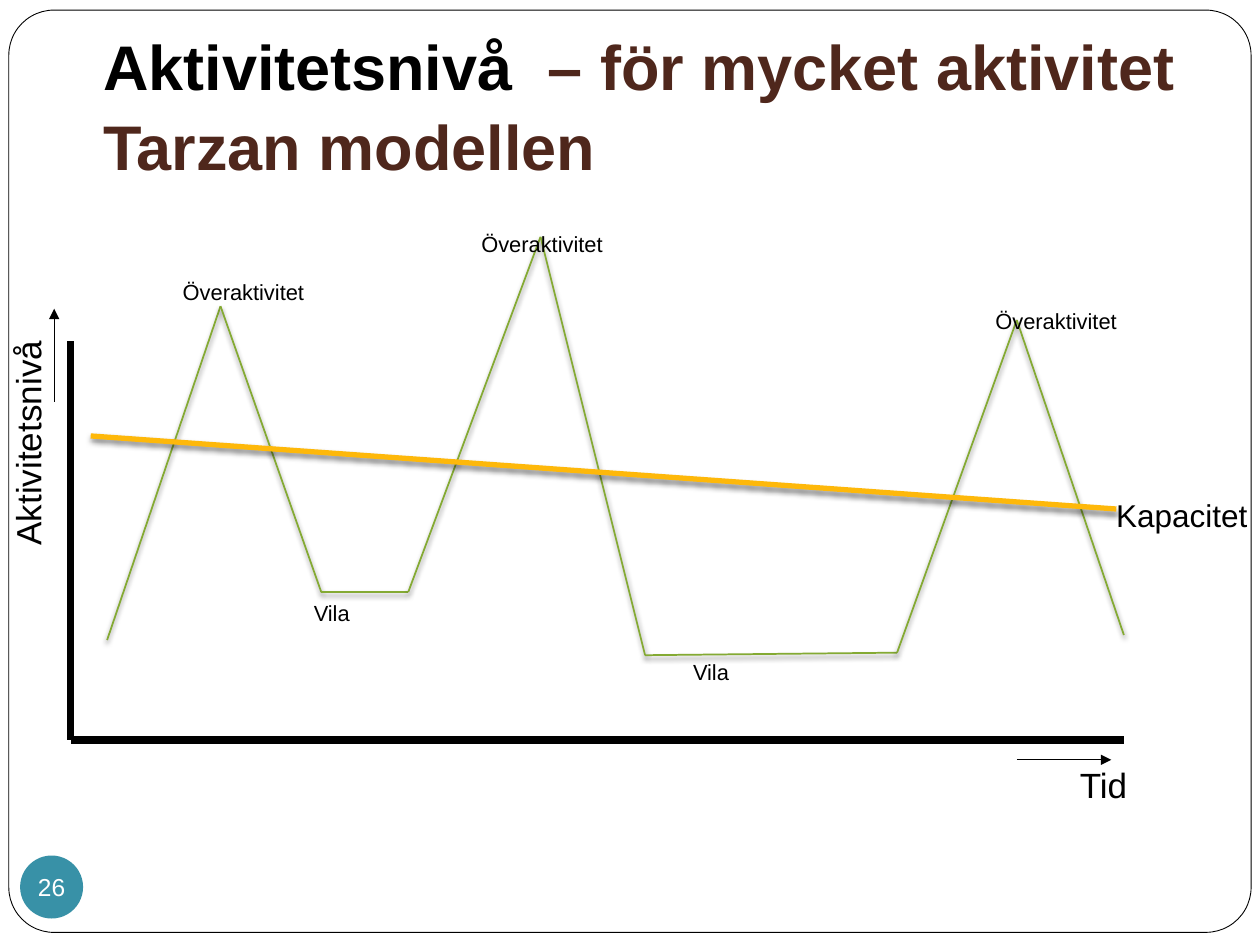
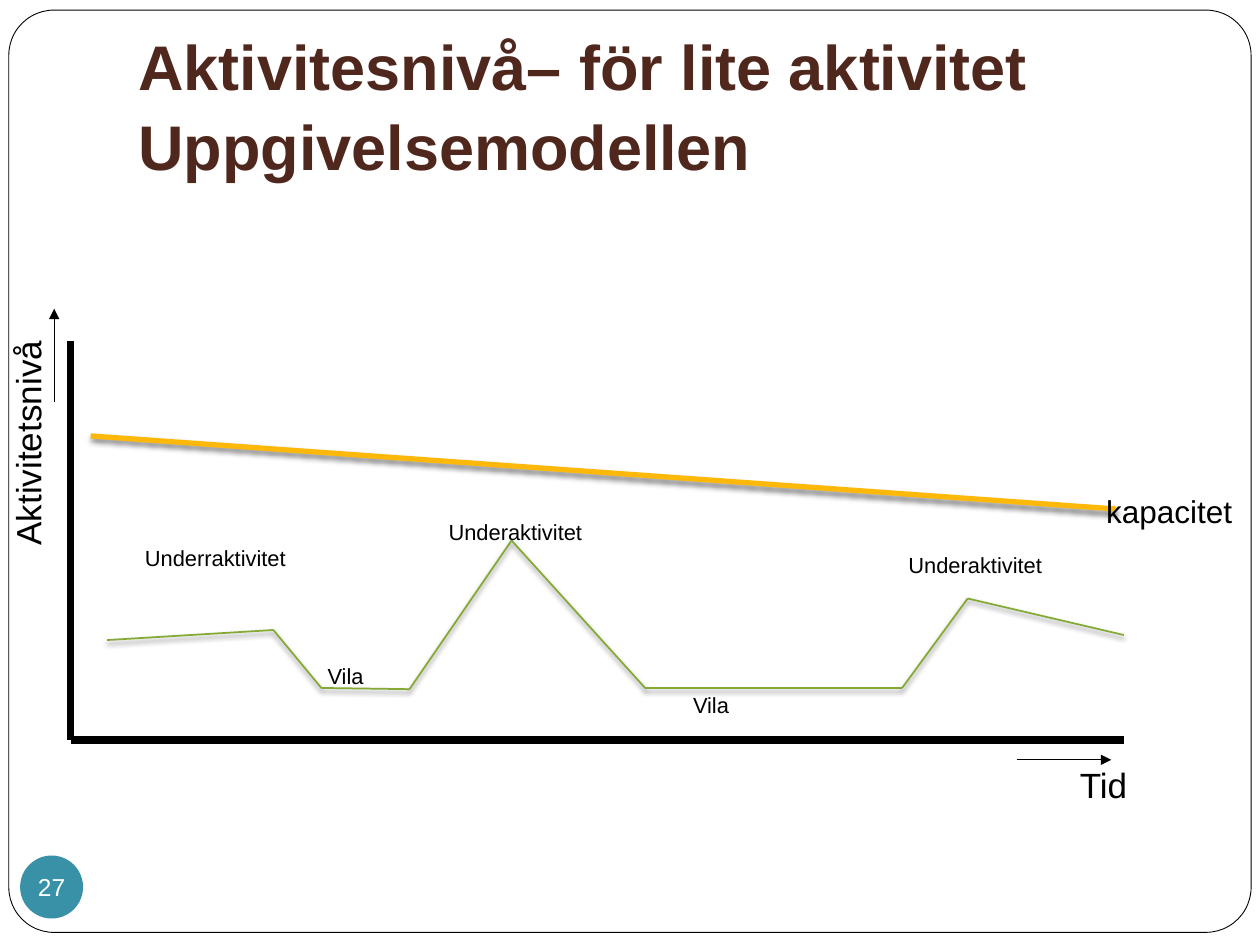
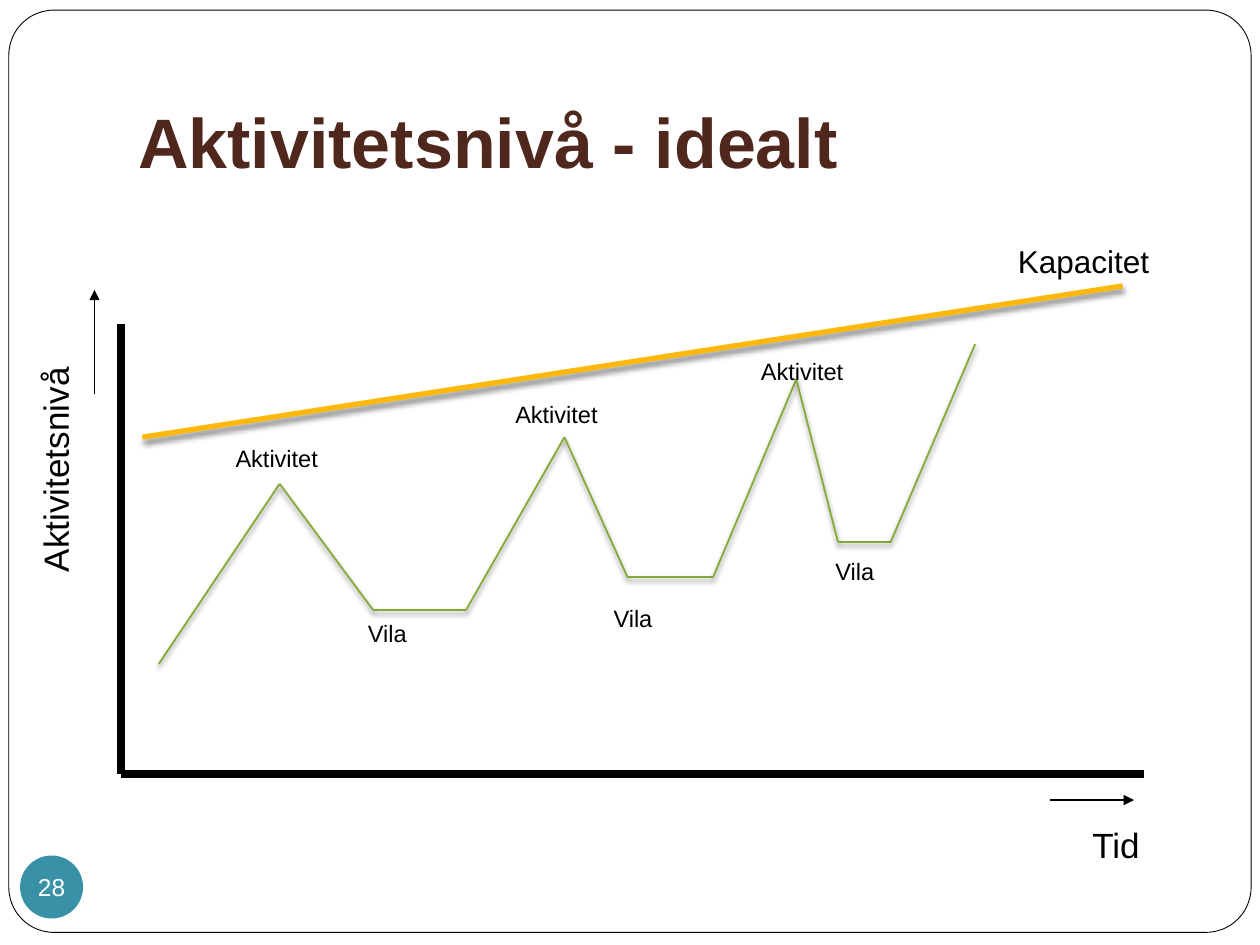
from dataclasses import dataclass
from itertools import pairwise
from typing import NamedTuple

from lxml.etree import SubElement
from pptx import Presentation
from pptx.dml.color import RGBColor
from pptx.enum.shapes import MSO_CONNECTOR, MSO_SHAPE
from pptx.enum.text import MSO_ANCHOR, PP_ALIGN
from pptx.oxml.ns import qn
from pptx.shapes.autoshape import Shape
from pptx.shapes.connector import Connector
from pptx.slide import Slide
from pptx.text.text import TextFrame
from pptx.util import Inches, Pt


@dataclass(frozen=True)
class Theme:
    font: str = "Arial"
    black: str = "000000"
    white: str = "FFFFFF"
    title: str = "4F271C"
    activity: str = "84AA33"
    capacity: str = "FEB80A"
    badge: str = "3891A7"
    axis_size: float = 20
    capacity_size: float = 18
    badge_size: float = 14


THEME = Theme()
FIRST_NUMBER = 26


class Point(NamedTuple):
    x: float
    y: float


class Box(NamedTuple):
    left: float
    top: float
    width: float
    height: float


class Insets(NamedTuple):
    left: float
    top: float
    right: float
    bottom: float


class Run(NamedTuple):
    text: str
    color: str = THEME.title


class Label(NamedTuple):
    text: str
    box: Box


@dataclass(frozen=True)
class Axes:
    origin: Point
    top: float
    right: float
    up_arrow: tuple[Point, Point]
    time_arrow: tuple[Point, Point]
    level_box: Box
    time_box: Box


@dataclass(frozen=True)
class ActivitySlide:
    title: list[Run]
    title_box: Box
    title_size: float
    axes: Axes
    activity: list[Point]
    capacity: tuple[Point, Point]
    capacity_label: Label
    labels: list[Label]
    label_size: float
    label_insets: Insets


TITLE_INSETS = Insets(0.1, 0.05, 0.1, 0.1)
TEXT_INSETS = Insets(0.1, 0.05, 0.1, 0.05)
NO_INSETS = Insets(0, 0, 0, 0)
NARROW_INSETS = Insets(0.05, 0.03, 0.05, 0.03)
WIDE_INSETS = Insets(0.06, 0.03, 0.06, 0.03)

TITLE_BOX = Box(1, 0.3, 8.5, 1.25)
FALLING_CAPACITY = (Point(0.72, 3.46), Point(8.86, 4.04))
LOW_AXES = Axes(
    origin=Point(0.56, 5.87), top=2.71, right=8.92,
    up_arrow=(Point(0.43, 3.19), Point(0.43, 2.45)),
    time_arrow=(Point(8.07, 6.03), Point(8.82, 6.03)),
    level_box=Box(0, 1.5, 0.72, 2.86), time_box=Box(8.52, 6.03, 1.12, 0.42),
)
IDEAL_AXES = Axes(
    origin=Point(0.96, 6.14), top=2.57, right=9.08,
    up_arrow=(Point(0.75, 3.13), Point(0.75, 2.3)),
    time_arrow=(Point(8.33, 6.35), Point(9, 6.35)),
    level_box=Box(0.21, 1.16, 0.54, 3.41), time_box=Box(8.61, 6.51, 0.6, 0.47),
)


def labels_at(text: str, width: float, height: float, *corners: Point) -> list[Label]:
    """Repeat one label, with its top left corner at each given point."""
    return [Label(text, Box(*corner, width, height)) for corner in corners]


SLIDES = [
    ActivitySlide(
        title=[Run("Aktivitetsnivå", THEME.black),
               Run("  – för mycket aktivitet\nTarzan modellen")],
        title_box=Box(0.72, 0.3, 8.78, 1.25), title_size=36,
        axes=LOW_AXES,
        activity=[Point(0.85, 5.08), Point(1.75, 2.43), Point(2.55, 4.7),
                  Point(3.24, 4.7), Point(4.29, 1.88), Point(5.12, 5.2),
                  Point(7.12, 5.18), Point(8.07, 2.54), Point(8.92, 5.04)],
        capacity=FALLING_CAPACITY,
        capacity_label=Label("Kapacitet", Box(8.76, 3.89, 1.25, 0.71)),
        labels=[
            *labels_at("Vila", 1.08, 0.53, Point(2.44, 4.73), Point(5.45, 5.2)),
            *labels_at("Överaktivitet", 2.15, 0.53,
                       Point(1.4, 2.18), Point(3.77, 1.8), Point(7.85, 2.41)),
        ],
        label_size=12.5, label_insets=NARROW_INSETS,
    ),
    ActivitySlide(
        title=[Run("Aktivitesnivå– för lite aktivitet\nUppgivelsemodellen")],
        title_box=TITLE_BOX, title_size=36,
        axes=LOW_AXES,
        activity=[Point(0.85, 5.08), Point(2.17, 5), Point(2.55, 5.46),
                  Point(3.25, 5.47), Point(4.06, 4.29), Point(5.12, 5.46),
                  Point(7.16, 5.46), Point(7.68, 4.75), Point(8.92, 5.04)],
        capacity=FALLING_CAPACITY,
        capacity_label=Label("kapacitet", Box(8.68, 3.86, 1.21, 0.4)),
        labels=[
            *labels_at("Vila", 1.08, 0.53, Point(2.55, 5.23), Point(5.45, 5.46)),
            *labels_at("Underraktivitet", 2.15, 0.53, Point(1.1, 4.29)),
            *labels_at("Underaktivitet", 2.15, 0.53,
                       Point(3.51, 4.09), Point(7.16, 4.35)),
        ],
        label_size=12.5, label_insets=NARROW_INSETS,
    ),
    ActivitySlide(
        title=[Run("Aktivitetsnivå - idealt")],
        title_box=TITLE_BOX, title_size=40,
        axes=IDEAL_AXES,
        activity=[Point(1.26, 5.27), Point(2.22, 3.84), Point(2.96, 4.84),
                  Point(3.7, 4.84), Point(4.48, 3.47), Point(4.98, 4.58),
                  Point(5.66, 4.58), Point(6.32, 3.01), Point(6.65, 4.3),
                  Point(7.07, 4.3), Point(7.74, 2.73)],
        capacity=(Point(1.13, 3.47), Point(8.91, 2.27)),
        capacity_label=Label("Kapacitet", Box(7.98, 1.87, 1.25, 0.4)),
        labels=[
            *labels_at("Vila", 1.09, 0.59,
                       Point(2.86, 4.88), Point(4.81, 4.76), Point(6.57, 4.39)),
            *labels_at("Aktivitet", 1.56, 0.59,
                       Point(1.81, 3.49), Point(4.03, 3.14), Point(5.98, 2.8)),
        ],
        label_size=13.5, label_insets=WIDE_INSETS,
    ),
]


def write_text(frame: TextFrame, runs: list[Run], *, size: float, bold: bool = False,
               insets: Insets = TEXT_INSETS, wrap: bool = True,
               anchor: MSO_ANCHOR = MSO_ANCHOR.TOP,
               alignment: PP_ALIGN = PP_ALIGN.LEFT, line_spacing: float = 1.0) -> None:
    frame.word_wrap = wrap
    frame.vertical_anchor = anchor
    frame.margin_left, frame.margin_top, frame.margin_right, frame.margin_bottom = map(
        Inches, insets)
    paragraph = frame.paragraphs[0]
    paragraph.alignment = alignment
    paragraph.line_spacing = line_spacing
    for text, color in runs:
        for index, line in enumerate(text.split("\n")):
            if index:
                paragraph.add_line_break()
            run = paragraph.add_run()
            run.text = line
            run.font.name = THEME.font
            run.font.size = Pt(size)
            run.font.bold = bold
            run.font.color.rgb = RGBColor.from_string(color)


def add_text(slide: Slide, box: Box, runs: list[Run], **text_format) -> Shape:
    text_box = slide.shapes.add_textbox(*map(Inches, box))
    write_text(text_box.text_frame, runs, **text_format)
    return text_box


def add_shape(slide: Slide, kind: MSO_SHAPE, box: Box, fill: str) -> Shape:
    shape = slide.shapes.add_shape(kind, *map(Inches, box))
    shape.shadow.inherit = False
    shape.fill.solid()
    shape.fill.fore_color.rgb = RGBColor.from_string(fill)
    shape.line.fill.background()
    return shape


def add_line(slide: Slide, start: Point, end: Point, *, color: str = THEME.black,
             width: float, shadow: bool = False, arrow: bool = False) -> Connector:
    connector = slide.shapes.add_connector(
        MSO_CONNECTOR.STRAIGHT, *map(Inches, (*start, *end)))
    connector.line.color.rgb = RGBColor.from_string(color)
    connector.line.width = Pt(width)
    properties = connector.element.spPr
    if arrow:
        SubElement(properties.find(qn("a:ln")), qn("a:tailEnd"), type="triangle")
    effects = SubElement(properties, qn("a:effectLst"))
    if shadow:
        outer = SubElement(effects, qn("a:outerShdw"), blurRad=str(Pt(3)),
                           dist=str(Pt(2)), dir="5400000", rotWithShape="0")
        shade = SubElement(outer, qn("a:srgbClr"), val=THEME.black)
        SubElement(shade, qn("a:alpha"), val="50000")
    return connector


def add_frame(slide: Slide) -> None:
    frame = add_shape(slide, MSO_SHAPE.ROUNDED_RECTANGLE,
                      Box(0.07, 0.08, 9.86, 7.32), THEME.white)
    frame.adjustments[0] = 0.049
    frame.line.color.rgb = RGBColor.from_string(THEME.black)
    frame.line.width = Pt(0.5)


def add_number(slide: Slide, number: int) -> None:
    badge = add_shape(slide, MSO_SHAPE.OVAL, Box(0.16, 6.79, 0.5, 0.5), THEME.badge)
    write_text(badge.text_frame, [Run(str(number), THEME.white)], size=THEME.badge_size,
               insets=NO_INSETS, wrap=False, anchor=MSO_ANCHOR.MIDDLE,
               alignment=PP_ALIGN.CENTER)


def add_axes(slide: Slide, axes: Axes, insets: Insets) -> None:
    add_line(slide, Point(axes.origin.x, axes.top), axes.origin, width=4.5)
    add_line(slide, Point(axes.right, axes.origin.y), axes.origin, width=4.5)
    level = add_text(slide, axes.level_box, [Run("Aktivitetsnivå", THEME.black)],
                     size=THEME.axis_size, insets=insets)
    level.element.txBody.bodyPr.set("vert", "vert270")
    add_text(slide, axes.time_box, [Run("Tid", THEME.black)],
             size=THEME.axis_size, insets=insets)
    for arrow in (axes.up_arrow, axes.time_arrow):
        add_line(slide, *arrow, width=0.75, arrow=True)


def add_activity_slide(presentation: Presentation, content: ActivitySlide,
                       number: int) -> None:
    slide = presentation.slides.add_slide(presentation.slide_layouts[6])
    add_frame(slide)
    add_text(slide, content.title_box, content.title, size=content.title_size, bold=True,
             insets=TITLE_INSETS, anchor=MSO_ANCHOR.BOTTOM, line_spacing=1.05)
    for start, end in pairwise(content.activity):
        add_line(slide, start, end, color=THEME.activity, width=1, shadow=True)
    add_line(slide, *content.capacity, color=THEME.capacity, width=3, shadow=True)
    for label in content.labels:
        add_text(slide, label.box, [Run(label.text, THEME.black)],
                 size=content.label_size, insets=content.label_insets)
    add_axes(slide, content.axes, content.label_insets)
    add_text(slide, content.capacity_label.box,
             [Run(content.capacity_label.text, THEME.black)],
             size=THEME.capacity_size, wrap=False)
    add_number(slide, number)


def main() -> None:
    presentation = Presentation()
    presentation.slide_width = Inches(10)
    presentation.slide_height = Inches(7.5)
    for number, content in enumerate(SLIDES, FIRST_NUMBER):
        add_activity_slide(presentation, content, number)
    presentation.save("out.pptx")


if __name__ == "__main__":
    main()
